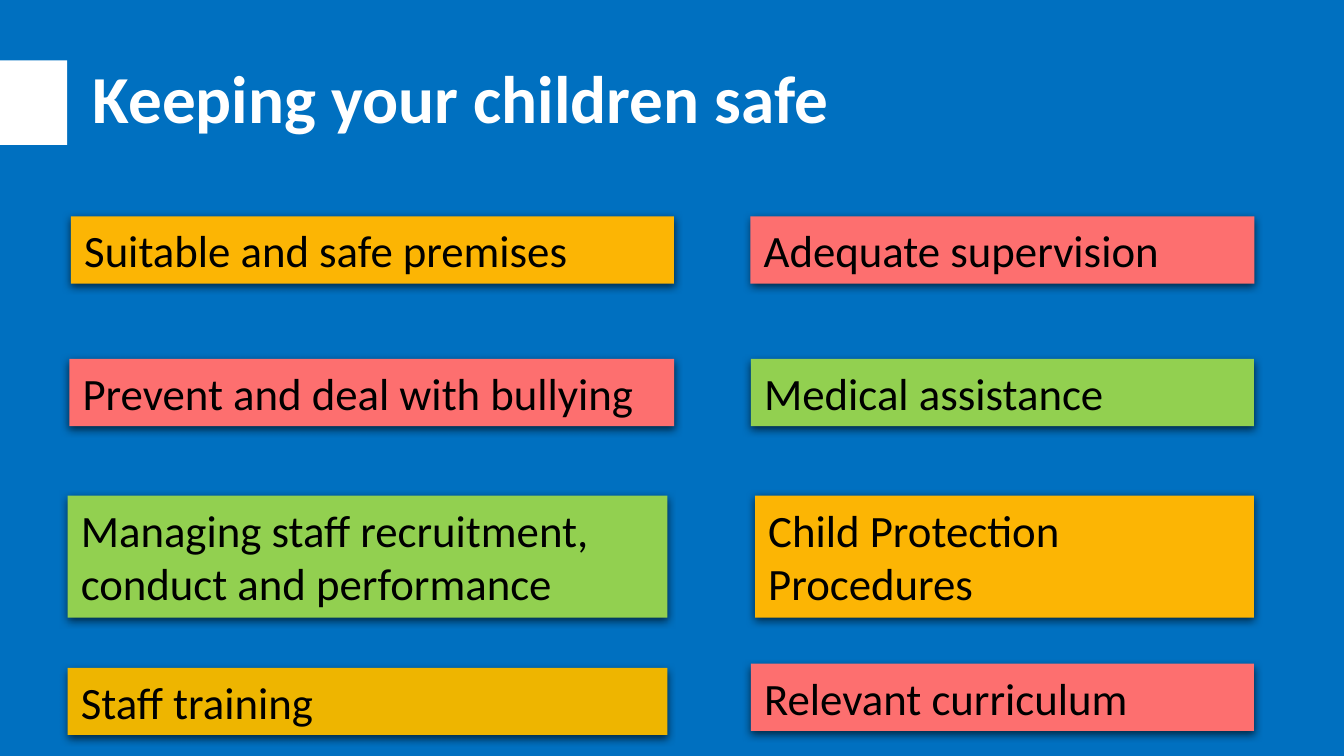
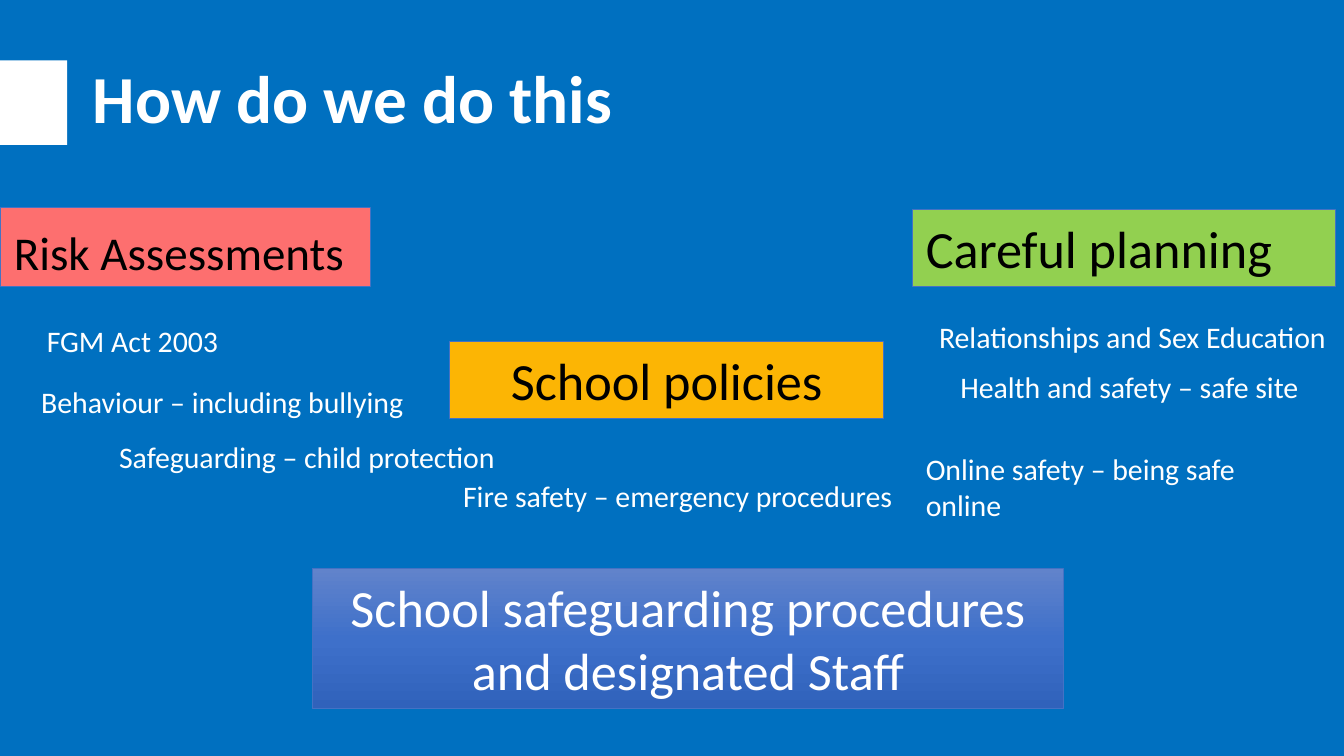
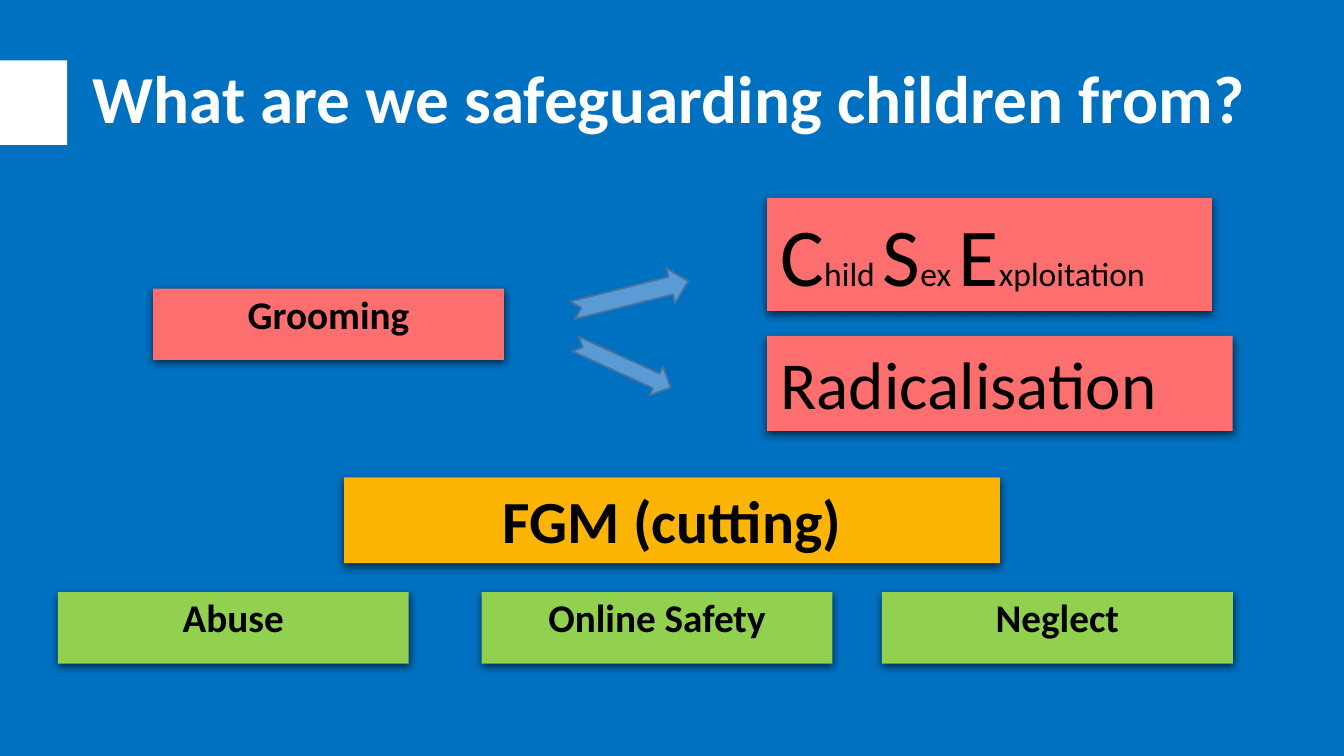
from copy import deepcopy

from lxml import etree
from pptx import Presentation
from pptx.dml.color import RGBColor
from pptx.enum.shapes import MSO_SHAPE
from pptx.enum.text import MSO_ANCHOR, MSO_AUTO_SIZE, PP_ALIGN
from pptx.oxml.ns import qn
from pptx.util import Pt

RECTANGLE = MSO_SHAPE.RECTANGLE
NOTCHED_ARROW = MSO_SHAPE.NOTCHED_RIGHT_ARROW
LEFT, CENTER = PP_ALIGN.LEFT, PP_ALIGN.CENTER
TOP, BOTTOM = MSO_ANCHOR.TOP, MSO_ANCHOR.BOTTOM
NO_AUTOFIT = MSO_AUTO_SIZE.NONE

FONT = "Calibri"
TITLE_ONLY = 5
BLUE = RGBColor(0x00, 0x70, 0xC0)
WHITE = RGBColor(0xFF, 0xFF, 0xFF)
BLACK = RGBColor(0x00, 0x00, 0x00)
AMBER = RGBColor(0xFC, 0xB5, 0x04)
GOLD = RGBColor(0xEE, 0xB5, 0x00)
CORAL = RGBColor(0xFD, 0x6F, 0x6F)
GREEN = RGBColor(0x92, 0xD0, 0x50)
OUTLINE = RGBColor(0x44, 0x72, 0xC4)
ARROW_FILL = RGBColor(0x5B, 0x9B, 0xD5)
ARROW_LINE = RGBColor(0x43, 0x73, 0x9E)
GRADIENT = (
    RGBColor(0x61, 0x83, 0xCB),
    RGBColor(0x3E, 0x70, 0xCA),
    RGBColor(0x30, 0x62, 0xBB),
)


def write_text(shape, spans, color, bold=False, align=LEFT, anchor=TOP, spacing=None):
    """Write one paragraph from (text, size) spans."""
    frame = shape.text_frame
    frame.word_wrap = True
    frame.auto_size = NO_AUTOFIT
    frame.vertical_anchor = anchor
    para = frame.paragraphs[0]
    para.alignment = align
    if spacing:
        para.line_spacing = spacing
    for text, size in spans:
        span = para.add_run()
        span.text = text
        span.font.name = FONT
        span.font.size = Pt(size)
        span.font.bold = bold
        span.font.color.rgb = color


def place(shape, area):
    shape.left, shape.top, shape.width, shape.height = map(Pt, area)


def add_block(page, area, fill, kind=RECTANGLE, line=None, line_width=0.5):
    block = page.shapes.add_shape(kind, *map(Pt, area))
    block.shadow.inherit = False
    block.fill.solid()
    block.fill.fore_color.rgb = fill
    if line is None:
        block.line.fill.background()
    else:
        block.line.color.rgb = line
        block.line.width = Pt(line_width)
    return block


def add_shadow(shape):
    effects = shape._element.spPr.find(qn("a:effectLst"))
    shadow = etree.SubElement(effects, qn("a:outerShdw"), blurRad="57150",
                              dist="19050", dir="5400000", algn="ctr", rotWithShape="0")
    color = etree.SubElement(shadow, qn("a:srgbClr"), val="000000")
    etree.SubElement(color, qn("a:alpha"), val="63000")


def add_card(page, area, fill, spans, **style):
    """Coloured box with a soft shadow."""
    card = add_block(page, area, fill)
    add_shadow(card)
    write_text(card, spans, BLACK, **style)


def add_label(page, area, fill, text, size, color=BLACK, **style):
    """Coloured box with a thin outline."""
    label = add_block(page, area, fill, line=OUTLINE)
    write_text(label, [(text, size)], color, **style)
    return label


def add_note(page, area, text):
    note = page.shapes.add_textbox(*map(Pt, area))
    write_text(note, [(text, 16)], WHITE)


def add_arrow(page, area, rotation):
    arrow = add_block(page, area, ARROW_FILL, NOTCHED_ARROW, ARROW_LINE, 1)
    arrow.rotation = rotation


def apply_gradient(shape, colors):
    """Fill from top to bottom with evenly spaced colours."""
    shape.fill.gradient()
    shape.fill.gradient_angle = 270
    stop_list = shape._element.spPr.find(".//" + qn("a:gsLst"))
    while len(stop_list) < len(colors):
        stop_list.append(deepcopy(stop_list[0]))
    for index, (stop, color) in enumerate(zip(shape.fill.gradient_stops, colors)):
        stop.position = index / (len(colors) - 1)
        stop.color.rgb = color


def add_page(deck, title, title_width=590):
    """Blue page with a white marker beside its title."""
    page = deck.slides.add_slide(deck.slide_layouts[TITLE_ONLY])
    page.background.fill.solid()
    page.background.fill.fore_color.rgb = BLUE
    place(page.shapes.title, (42.5, 26.5, title_width, 51))
    write_text(page.shapes.title, [(title, 36)], WHITE, bold=True)
    add_block(page, (0, 32.4, 36, 45.2), WHITE)
    return page


def build_safety_page(deck):
    page = add_page(deck, "Keeping your children safe")
    cards = [
        (38, 116, 323, 36, AMBER, "Suitable and safe premises"),
        (402, 116, 270, 36, CORAL, "Adequate supervision"),
        (37.2, 192.3, 324, 36, CORAL, "Prevent and deal with bullying"),
        (402.3, 192.3, 269.5, 36, GREEN, "Medical assistance"),
        (36.2, 265.5, 321.3, 65.4, GREEN, "Managing staff recruitment, conduct and performance"),
        (404.5, 265.5, 267.3, 65.4, AMBER, "Child Protection Procedures"),
        (36.2, 357.8, 321.3, 36, GOLD, "Staff training"),
        (402.3, 355.6, 269.5, 36, CORAL, "Relevant curriculum"),
    ]
    for *area, fill, text in cards:
        add_card(page, area, fill, [(text, 24)])


def build_method_page(deck):
    page = add_page(deck, "How do we do this")

    # Main measures
    add_label(page, (0.3, 111.4, 198.2, 42), CORAL, "Risk Assessments", 25.2, anchor=BOTTOM)
    add_label(page, (488.9, 112.3, 226.6, 41.2), GREEN, "Careful planning", 28)
    add_label(page, (241, 183.2, 232.3, 41.2), AMBER, "School policies", 28, align=CENTER)
    staff = add_label(page, (167.2, 304.8, 402.6, 75), OUTLINE,
                      "School safeguarding procedures and designated Staff",
                      28, WHITE, align=CENTER)
    apply_gradient(staff, GRADIENT)

    # Policies around them
    notes = [
        (18, 169.5, 220, 26.6, "FGM Act 2003"),
        (15, 201.8, 220, 26.6, "Behaviour – including bullying"),
        (56.7, 231.3, 221, 26.6, "Safeguarding – child protection"),
        (241, 252.3, 273.6, 26.6, "Fire safety – emergency procedures"),
        (496, 167.2, 224, 26.6, "Relationships and Sex Education"),
        (507.4, 193.9, 199, 26.6, "Health and safety – safe site"),
        (488.9, 237.8, 194.4, 46, "Online safety – being safe online"),
    ]
    for *area, text in notes:
        add_note(page, area, text)


def build_risk_page(deck):
    page = add_page(deck, "What are we safeguarding children from?", 641)

    # Grooming and what it leads to
    small_cards = [
        (82, 154.6, CORAL, "Grooming"),
        (31, 317.3, GREEN, "Abuse"),
        (258, 317.3, GREEN, "Online Safety"),
        (472.5, 317.3, GREEN, "Neglect"),
    ]
    for left, top, fill, text in small_cards:
        add_card(page, (left, top, 188, 38.2), fill, [(text, 21)],
                 bold=True, align=CENTER, spacing=0.9)
    add_arrow(page, (305.7, 148.7, 64, 19.5), 345.9)
    add_arrow(page, (305.7, 187.3, 56.2, 17.3), 24.6)
    exploitation = [("C", 44), ("hild ", 18), ("S", 44), ("ex ", 18),
                    ("E", 44), ("xploitation", 18)]
    add_card(page, (411, 106, 238.2, 60.6), CORAL, exploitation)
    add_card(page, (411, 180, 249.4, 50.9), CORAL, [("Radicalisation", 36)])

    # Other risks
    add_card(page, (184.3, 255.7, 351.4, 46), AMBER, [("FGM (cutting)", 32)],
             bold=True, align=CENTER)


def main():
    deck = Presentation()
    deck.slide_width, deck.slide_height = Pt(720), Pt(405)
    build_safety_page(deck)
    build_method_page(deck)
    build_risk_page(deck)
    deck.save("out.pptx")


if __name__ == "__main__":
    main()
